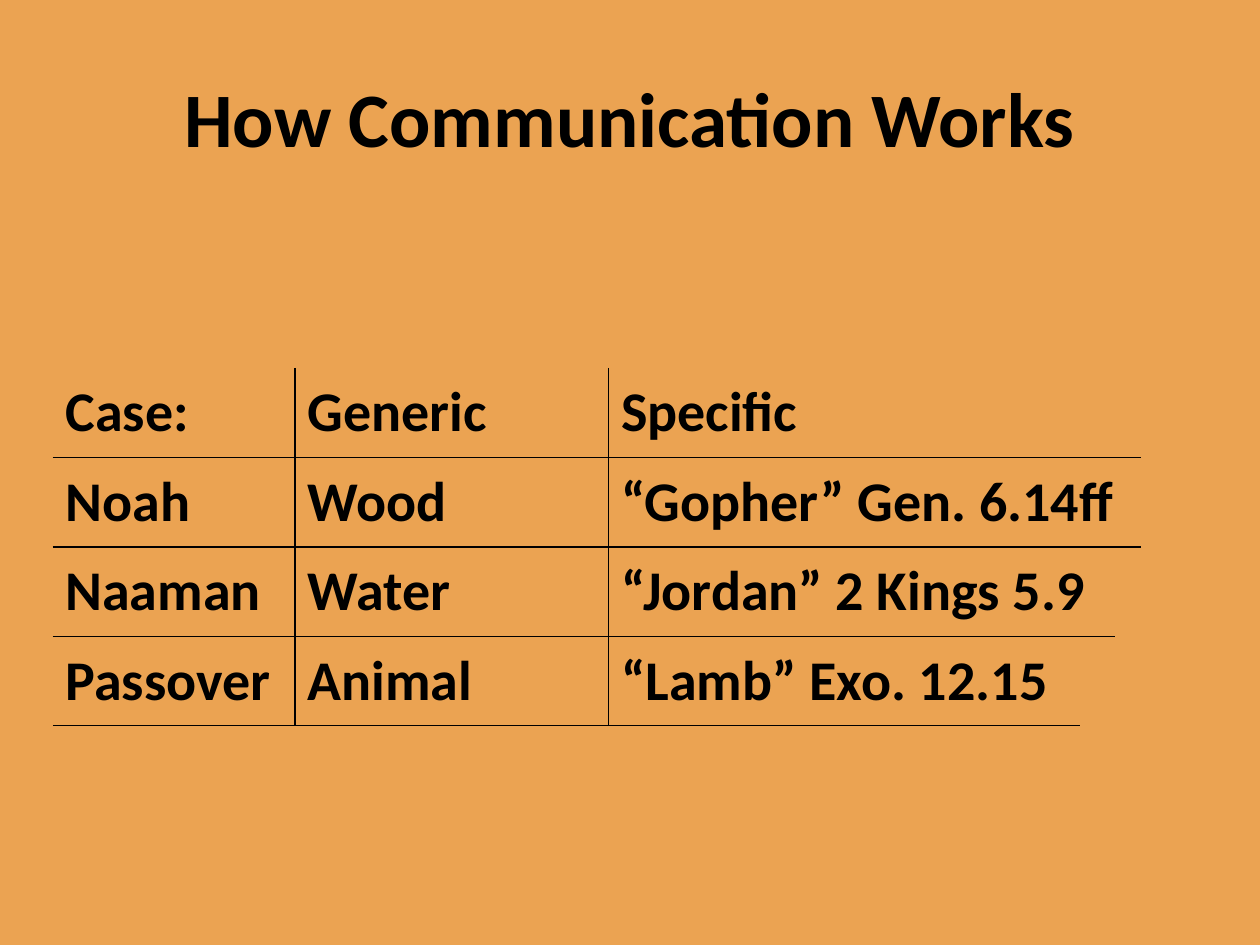
from lxml import etree
from pptx import Presentation
from pptx import util as u
from pptx.dml.color import RGBColor
from pptx.enum import shapes, text
from pptx.oxml.ns import qn

CASES = [
    (("Case:", "Generic", "Specific"), 1.68),
    (("Noah", "Wood", "“Gopher” Gen. 6.14ff"), 4.23),
    (("Naaman", "Water", "“Jordan” 2 Kings 5.9"), 4.02),
    (("Passover", "Animal", "“Lamb” Exo. 12.15"), 3.74),
]
CASE_WIDTH, GENERIC_WIDTH = 1.92, 2.49
LEFT, TOP, ROW_HEIGHT = 0.42, 2.92, 0.71


def colour(value):
    return RGBColor.from_string(value)


class Slide:
    font = "Calibri"
    ink = "000000"
    ground = "EBA352"
    title_size = 44
    cell_size = 32

    def __init__(self, deck):
        self.width, self.height = deck.slide_width, deck.slide_height
        self.page = deck.slides.add_slide(deck.slide_layouts[5])

    def place(self, left, top, width, height):
        return (int(left * self.width), int(top * self.height),
                int(width * self.width), int(height * self.height))

    def format(self, para, size):
        for span in para.runs:
            span.font.name = self.font
            span.font.size = u.Pt(size)
            span.font.bold = True
            span.font.color.rgb = colour(self.ink)

    def backdrop(self):
        box = self.page.shapes.add_shape(
            shapes.MSO_SHAPE.RECTANGLE, *self.place(0, 0, 1, 1))
        box.shadow.inherit = False
        box.fill.solid()
        box.fill.fore_color.rgb = colour(self.ground)
        box.line.fill.background()
        self.page.shapes.title.element.addprevious(box.element)

    def title(self, words):
        box = self.page.shapes.title
        box.left, box.top, box.width, box.height = self.place(0.05, 0.04, 0.9, 1 / 6)
        frame = box.text_frame
        frame.text = words
        frame.vertical_anchor = text.MSO_ANCHOR.MIDDLE
        para = frame.paragraphs[0]
        para.alignment = text.PP_ALIGN.CENTER
        self.format(para, self.title_size)

    def borders(self, cell, drawn):
        properties = cell._tc.get_or_add_tcPr()
        for side in "LRTB":
            line = etree.SubElement(properties, qn("a:ln" + side), w=str(u.Pt(1)))
            if side in drawn:
                fill = etree.SubElement(line, qn("a:solidFill"))
                etree.SubElement(fill, qn("a:srgbClr"), val=self.ink)
            else:
                etree.SubElement(line, qn("a:noFill"))

    def row_table(self, words, widths, top, upper_line):
        frame = self.page.shapes.add_table(1, len(words), *self.place(
            LEFT / 10, top / 7.5, sum(widths) / 10, ROW_HEIGHT / 7.5))
        table = frame.table
        table.first_row = table.horz_banding = False
        level = "TB" if upper_line else "B"
        for index, (word, width) in enumerate(zip(words, widths)):
            table.columns[index].width = u.Inches(width)
            cell = table.cell(0, index)
            cell.text_frame.text = word
            cell.vertical_anchor = text.MSO_ANCHOR.MIDDLE
            self.format(cell.text_frame.paragraphs[0], self.cell_size)
            left = "L" if index > 0 else ""
            right = "R" if index < len(words) - 1 else ""
            self.borders(cell, level + left + right)
            cell.fill.background()


def main():
    deck = Presentation()
    deck.slide_width, deck.slide_height = u.Inches(10), u.Inches(7.5)
    slide = Slide(deck)
    slide.backdrop()
    slide.title("How Communication Works")
    for row, (words, specific_width) in enumerate(CASES):
        slide.row_table(words, (CASE_WIDTH, GENERIC_WIDTH, specific_width),
                        TOP + row * ROW_HEIGHT, row > 0)
    deck.save("out.pptx")


if __name__ == "__main__":
    main()
